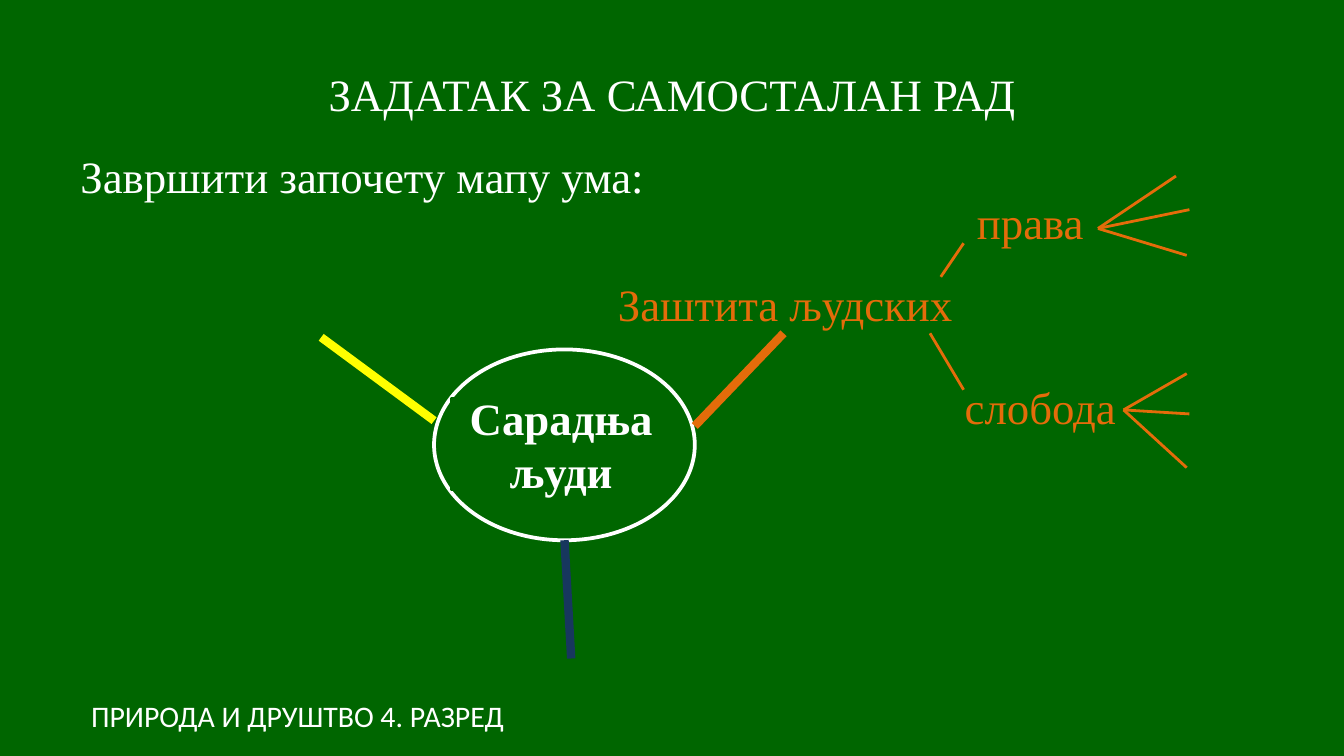
from lxml import etree
from pptx import Presentation
from pptx.dml.color import RGBColor
from pptx.enum.shapes import MSO_CONNECTOR as Connector, MSO_SHAPE as Shape
from pptx.enum.text import MSO_ANCHOR as Anchor, PP_ALIGN as Align
from pptx.oxml.ns import qn
from pptx.util import Inches, Pt

GREEN = RGBColor(0x00, 0x66, 0x00)
WHITE = RGBColor(0xFF, 0xFF, 0xFF)
ORANGE = RGBColor(0xE4, 0x6C, 0x0A)
YELLOW = RGBColor(0xFF, 0xFF, 0x00)
NAVY = RGBColor(0x17, 0x37, 0x5E)

SERIF = {"name": "Times New Roman", "size": Pt(24), "bold": False}
FOOTER_FONT = {"name": "Calibri", "size": Pt(16)}
THIN, THICK = 1.5, 4.5


def add_run(paragraph, text, color, font=SERIF):
    run = paragraph.add_run()
    run.text = text
    for name, value in font.items():
        setattr(run.font, name, value)
    run.font.color.rgb = color


def write(shape, text, color, font=SERIF, align=Align.LEFT, anchor=Anchor.TOP):
    frame = shape.text_frame
    frame.word_wrap = True
    frame.vertical_anchor = anchor
    paragraph = frame.paragraphs[0]
    paragraph.alignment = align
    add_run(paragraph, text, color, font)


def add_text(slide, box, text, color, **style):
    shape = slide.shapes.add_textbox(*map(Inches, box))
    write(shape, text, color, **style)
    return shape


def add_filled(slide, kind, box, line_color):
    shape = slide.shapes.add_shape(kind, *map(Inches, box))
    shape.shadow.inherit = False
    shape.fill.solid()
    shape.fill.fore_color.rgb = GREEN
    shape.line.color.rgb = line_color
    shape.line.width = Pt(2)
    return shape


def add_line(slide, start, end, color, width):
    line = slide.shapes.add_connector(
        Connector.STRAIGHT, *map(Inches, (*start, *end)))
    line.line.color.rgb = color
    line.line.width = Pt(width)
    etree.SubElement(line._element.spPr, qn("a:effectLst"))


def add_body(slide, box):
    """Instruction, then the indented name of the started branch."""
    body = add_text(slide, box, "Завршити започету мапу ума:", WHITE)
    branch = body.text_frame.add_paragraph()
    branch.space_before = Pt(39.4)
    branch._p.get_or_add_pPr().set("marL", str(Inches(4)))
    add_run(branch, "Заштита људских", ORANGE)


def add_center(slide, box):
    """Central topic with the three main branches leaving it."""
    left, top, width, height = box
    add_filled(slide, Shape.OVAL, box, WHITE)
    label = add_filled(slide, Shape.RECTANGLE,
                       (left + 0.13, top + 0.37, 1.63, 0.67), GREEN)
    write(label, "Сарадња људи", WHITE, font={**SERIF, "bold": True},
          align=Align.CENTER, anchor=Anchor.MIDDLE)
    bottom = top + height
    middle = left + width / 2
    right = left + width
    branches = [
        ((right, top + 0.57), (right + 0.66, top - 0.12), ORANGE),
        ((middle, bottom), (middle + 0.05, bottom + 0.88), NAVY),
        ((left, top + 0.53), (left - 0.84, top - 0.09), YELLOW),
    ]
    for start, end, color in branches:
        add_line(slide, start, end, color, THICK)


def add_topic(slide, box, text, fan_start, fan_ends):
    """Subtopic label with a fan of thin lines; fan points are box offsets."""
    left, top = box[:2]
    write(add_filled(slide, Shape.RECTANGLE, box, GREEN), text, ORANGE)
    start = (left + fan_start[0], top + fan_start[1])
    for x, y in fan_ends:
        add_line(slide, start, (left + x, top + y), ORANGE, THIN)


def add_subtopics(slide, box):
    """Two subtopics and their links to the started branch."""
    left, top = box[:2]
    add_topic(slide, (left + 0.09, top, 1.08, 0.6), "права",
              (1, 0.3), [(1.58, -0.09), (1.68, 0.16), (1.66, 0.5)])
    add_topic(slide, (left, top + 1.38, 1.33, 0.6), "слобода",
              (1.28, 0.27), [(1.75, 0), (1.77, 0.3), (1.75, 0.7)])
    add_line(slide, (left + 0.09, top + 0.41), (left - 0.08, top + 0.66),
             ORANGE, THIN)
    add_line(slide, (left - 0.16, top + 1.08), (left + 0.09, top + 1.5),
             ORANGE, THIN)


def main():
    presentation = Presentation()
    presentation.slide_width = Inches(10)
    presentation.slide_height = presentation.slide_width * 9 // 16
    slide = presentation.slides.add_slide(presentation.slide_layouts[6])
    slide.background.fill.solid()
    slide.background.fill.fore_color.rgb = GREEN

    # Title and body
    add_text(slide, (0.5, 0.23, 9, 0.94), "ЗАДАТАК ЗА САМОСТАЛАН РАД", WHITE,
             align=Align.CENTER, anchor=Anchor.MIDDLE)
    add_body(slide, (0.5, 1.06, 9, 4.25))

    # Mind map
    add_center(slide, (3.23, 2.6, 1.94, 1.42))
    add_subtopics(slide, (7.08, 1.4, 1.77, 1.98))

    # Footer
    add_text(slide, (0.58, 5.14, 3.83, 0.37), "ПРИРОДА И ДРУШТВО 4. РАЗРЕД",
             WHITE, font=FOOTER_FONT)
    presentation.save("out.pptx")


if __name__ == "__main__":
    main()
